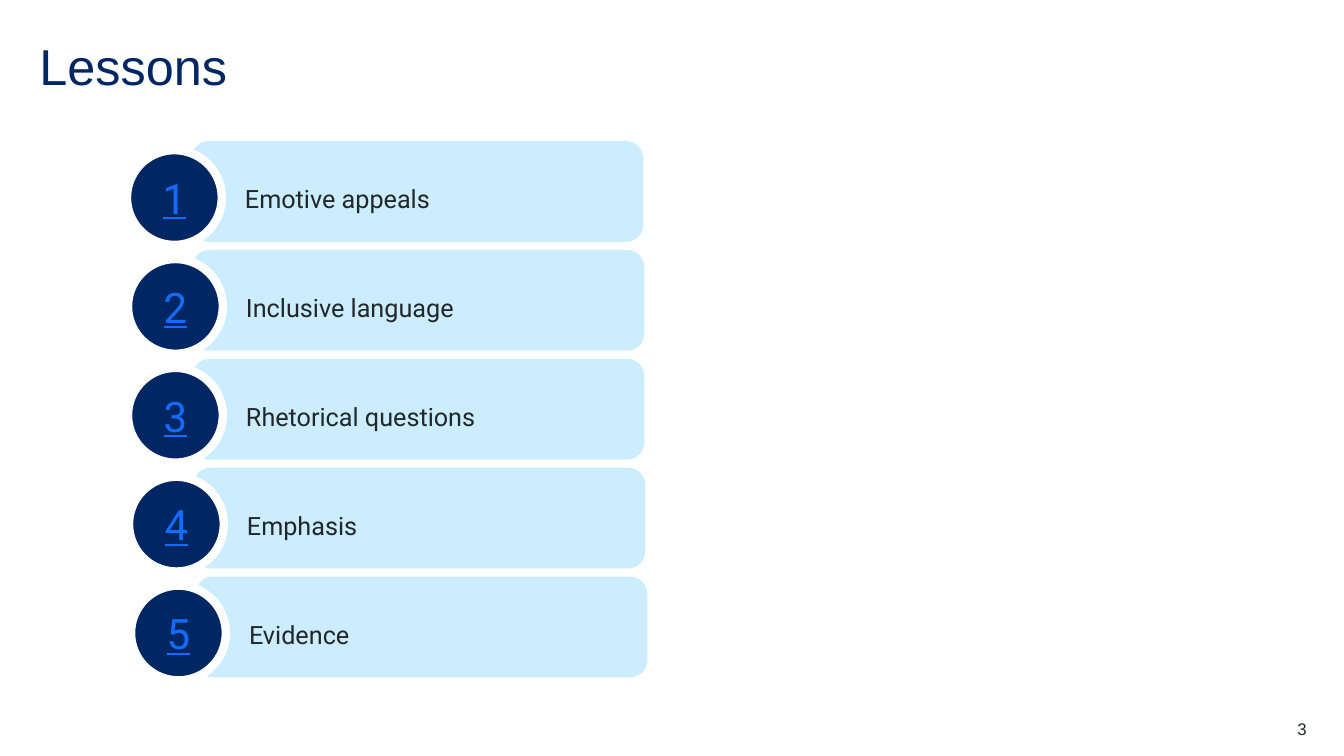
from pptx import Presentation
from pptx.dml.color import RGBColor
from pptx.enum.shapes import MSO_SHAPE as Shape
from pptx.enum.text import MSO_ANCHOR as Anchor, MSO_AUTO_SIZE as AutoSize, PP_ALIGN as Align
from pptx.util import Inches, Pt

COLORS = {
    "navy": "002664",
    "pale": "CBEDFD",
    "link": "146CFD",
    "ink": "22272B",
    "white": "FFFFFF",
}
# Lesson name and left edge of its number circle
LESSONS = [
    ("Emotive appeals", 1.26),
    ("Inclusive language", 1.27),
    ("Rhetorical questions", 1.27),
    ("Emphasis", 1.28),
    ("Evidence", 1.3),
]
FIRST_TOP, ROW_STEP = 1.4, 1.08


def color(name):
    return RGBColor.from_string(COLORS[name])


class LessonSlide:
    heading_font = "Arial"
    body_font = "Roboto"

    def __init__(self, slide):
        self.slide = slide

    def add_text(self, frame, text, size, font, ink, align=Align.LEFT, spacing=1.0, underline=False):
        para = frame.paragraphs[0]
        para.alignment = align
        para.line_spacing = spacing
        span = para.add_run()
        span.text = text
        span.font.size = Pt(size)
        span.font.name = font
        span.font.color.rgb = color(ink)
        span.font.underline = underline

    def clear_margins(self, frame):
        frame.margin_left = frame.margin_top = frame.margin_right = frame.margin_bottom = 0
        frame.word_wrap = True

    def title(self, text):
        box = self.slide.shapes.title
        box.left, box.top = Inches(0.39), Inches(0.39)
        box.width, box.height = Inches(12.56), Inches(0.6)
        frame = box.text_frame
        self.clear_margins(frame)
        frame.auto_size = AutoSize.NONE
        frame.vertical_anchor = Anchor.MIDDLE
        self.add_text(frame, text, 36, self.heading_font, "navy", spacing=0.9)

    def page_number(self, text):
        box = self.slide.shapes.add_textbox(Inches(12.17), Inches(7.13), Inches(0.79), Inches(0.2))
        self.clear_margins(box.text_frame)
        self.add_text(box.text_frame, text, 12, self.heading_font, "ink", Align.RIGHT)

    def shape(self, kind, left, top, width, height, fill):
        shape = self.slide.shapes.add_shape(
            kind, Inches(left), Inches(top), Inches(width), Inches(height))
        shape.shadow.inherit = False
        shape.fill.solid()
        shape.fill.fore_color.rgb = color(fill)
        shape.line.fill.background()
        return shape

    def bar(self, left, top):
        bar = self.shape(Shape.ROUNDED_RECTANGLE, left, top, 4.48, 1, "pale")
        bar.adjustments[0] = 0.17

    def number(self, left, top, text):
        circle = self.shape(Shape.OVAL, left, top, 0.94, 0.94, "navy")
        circle.line.color.rgb = color("white")
        circle.line.width = Pt(6)
        circle.text_frame.vertical_anchor = Anchor.MIDDLE
        self.add_text(circle.text_frame, text, 30, self.body_font, "link", Align.CENTER, underline=True)

    def label(self, left, top, text):
        box = self.shape(Shape.RECTANGLE, left, top, 3.63, 0.4, "pale")
        frame = box.text_frame
        self.clear_margins(frame)
        frame.auto_size = AutoSize.SHAPE_TO_FIT_TEXT
        frame.vertical_anchor = Anchor.TOP
        self.add_text(frame, text, 18, self.body_font, "ink", spacing=1.5)

    def lesson(self, number, name, left, top):
        self.bar(left + 0.64, top)
        self.number(left, top + 0.09, str(number))
        self.label(left + 1.17, top + 0.27, name)


def main():
    deck = Presentation()
    deck.slide_width, deck.slide_height = Inches(13.33), Inches(7.5)
    page = LessonSlide(deck.slides.add_slide(deck.slide_layouts[5]))
    page.title("Lessons")
    page.page_number("3")
    for row, (name, left) in enumerate(LESSONS):
        page.lesson(row + 1, name, left, FIRST_TOP + row * ROW_STEP)
    deck.save("out.pptx")


if __name__ == "__main__":
    main()
